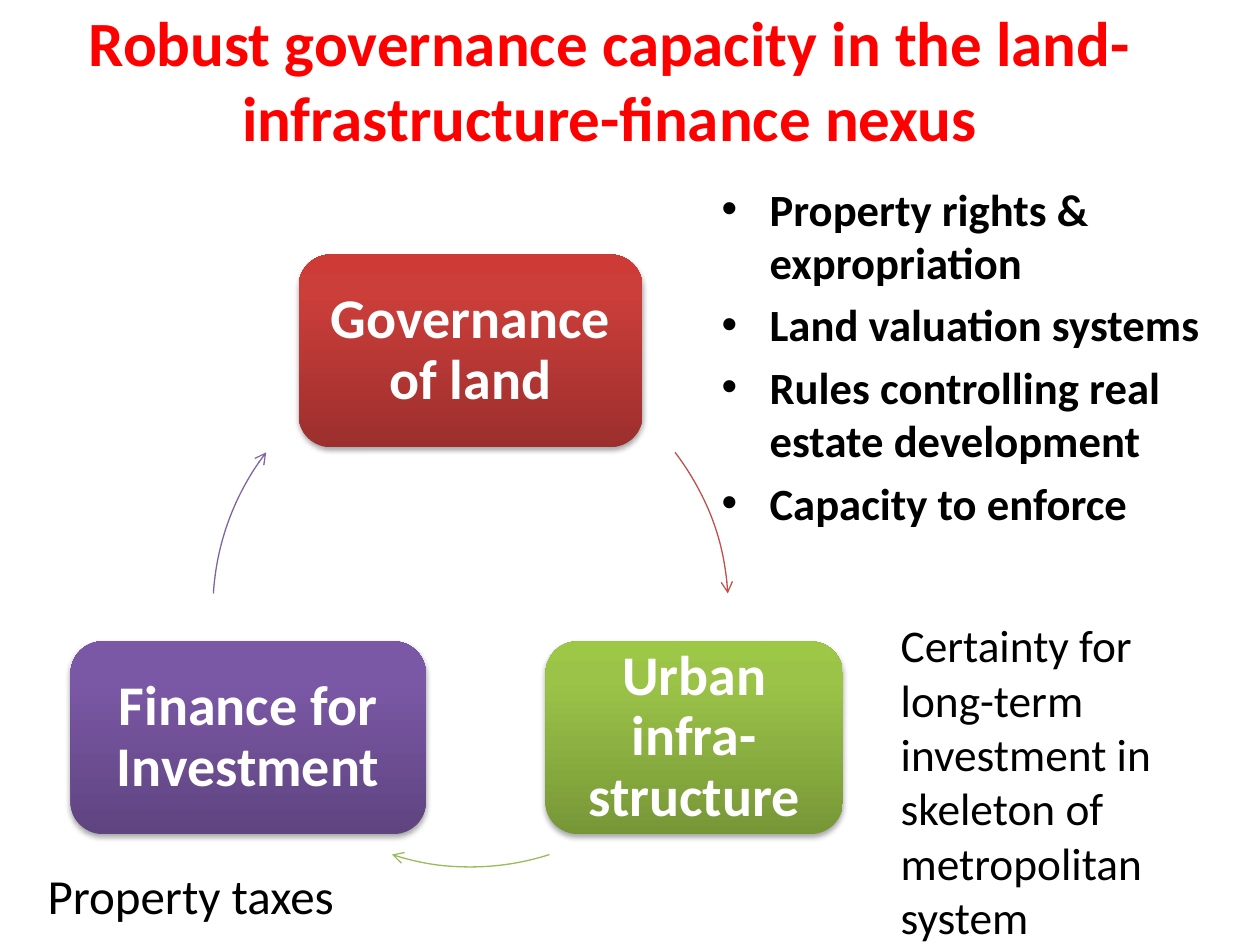
import copy

import pptx
import pptx.dml.color
import pptx.enum.shapes
import pptx.enum.text
import pptx.oxml
import pptx.oxml.ns
import pptx.util
from pptx.util import Inches

COLORS = {"title": "FF0000", "text": "000000", "white": "FFFFFF"}
NS = pptx.oxml.ns.nsdecls("a")
ALIGN = pptx.enum.text.PP_ALIGN
ANCHOR = pptx.enum.text.MSO_ANCHOR
SHAPES = pptx.enum.shapes.MSO_SHAPE


def rgb(value):
    return pptx.dml.color.RGBColor.from_string(value)


def write(shape, lines, size, color, bold=False, align=ALIGN.LEFT, anchor=ANCHOR.TOP):
    """Fill a shape with equally styled paragraphs and return them."""
    frame = shape.text_frame
    frame.word_wrap = True
    frame.vertical_anchor = anchor
    frame.text = "\n".join(lines)
    for para in frame.paragraphs:
        para.alignment = align
        para.font.name = "Calibri"
        para.font.size = pptx.util.Pt(size)
        para.font.bold = bold
        para.font.color.rgb = rgb(color)
    return frame.paragraphs


deck = pptx.Presentation()
deck.slide_width, deck.slide_height = Inches(10), Inches(7.5)
page = deck.slides.add_slide(deck.slide_layouts[6])

# Cycle: rounded nodes as left, top, width, text, gradient from bottom to top
nodes = [
    (2.37, 2.02, 2.73, "Governance of land", ("9C2F2D", "CB3E3A", "CE3B37")),
    (4.33, 5.09, 2.36, "Urban infra-structure", ("779737", "9BC348", "9DC746")),
    (0.56, 5.09, 2.82, "Finance for Investment", ("5F4480", "7B58A6", "7C57A8")),
]
for left, top, width, label, shades in nodes:
    node = page.shapes.add_shape(
        SHAPES.ROUNDED_RECTANGLE, Inches(left), Inches(top), Inches(width), Inches(1.53))
    node.line.fill.background()
    node.fill.gradient()
    node.fill.gradient_angle = 90
    stop_list = node.fill.gradient_stops[0]._gs.getparent()
    stop_list.append(copy.deepcopy(stop_list[-1]))
    for stop, position, shade in zip(node.fill.gradient_stops, (0, 0.8, 1), shades):
        stop.position = position
        stop.color.rgb = rgb(shade)

    # Soft shadow below the node
    node.shadow.inherit = False
    effects = node._element.spPr.find(pptx.oxml.ns.qn("a:effectLst"))
    effects.append(pptx.oxml.parse_xml(
        f'<a:outerShdw {NS} blurRad="40000" dist="23000" dir="5400000" rotWithShape="0">'
        '<a:srgbClr val="000000"><a:alpha val="35000"/></a:srgbClr></a:outerShdw>'))

    frame = node.text_frame
    frame.margin_left = frame.margin_right = Inches(0.13)
    frame.margin_top = frame.margin_bottom = Inches(0.13)
    para = write(node, [label], 32, COLORS["white"], True, ALIGN.CENTER, ANCHOR.MIDDLE)[0]
    para.line_spacing = 0.9

# Cycle: arrows on one circle, as start and end in degrees clockwise from the right
for start, end, color in [(322.5, 356.5, "C0504D"),
                          (72.2, 107.8, "9BBB59"),
                          (183.5, 217.5, "8064A2")]:
    arc = page.shapes.add_shape(
        SHAPES.ARC, Inches(1.69), Inches(2.79), Inches(4.09), Inches(4.09))
    arc.adjustments[0] = start * 0.6  # 60000 units per degree, scaled by 100000
    arc.adjustments[1] = end * 0.6
    arc.fill.background()
    arc.shadow.inherit = False
    arc.line.color.rgb = rgb(color)
    arc.line.width = pptx.util.Pt(0.75)
    arc.line._get_or_add_ln().append(pptx.oxml.parse_xml(f'<a:tailEnd {NS} type="arrow"/>'))

# Title
title = page.shapes.add_textbox(Inches(0.51), Inches(0), Inches(8.66), Inches(1.25))
write(title, ["Robust governance capacity in the land-infrastructure-finance nexus"],
      36, COLORS["title"], True, ALIGN.CENTER, ANCHOR.MIDDLE)

# Bullets on land governance
box = page.shapes.add_textbox(Inches(5.63), Inches(1.39), Inches(4.37), Inches(2.59))
bullets = ["Property rights & expropriation", "Land valuation systems",
           "Rules controlling real estate development", "Capacity to enforce"]
for para in write(box, bullets, 25.5, COLORS["text"], True):
    para.space_before = pptx.util.Pt(5)
    props = para._p.get_or_add_pPr()
    props.set("marL", str(Inches(0.38)))
    props.set("indent", str(-Inches(0.38)))
    font_props = props.find(pptx.oxml.ns.qn("a:defRPr"))
    for mark in (f'<a:buFont {NS} typeface="Arial"/>', f'<a:buChar {NS} char="•"/>'):
        font_props.addprevious(pptx.oxml.parse_xml(mark))

# Notes beside infrastructure and finance
for left, top, width, height, size, note in [
    (7.05, 4.85, 2.47, 2.44, 25.9,
     "Certainty for long-term investment in skeleton of metropolitan system"),
    (0.28, 6.82, 2.76, 0.68, 28, "Property taxes"),
]:
    box = page.shapes.add_textbox(Inches(left), Inches(top), Inches(width), Inches(height))
    para = write(box, [note], size, COLORS["text"])[0]
    para.space_before = pptx.util.Pt(5)

deck.save("out.pptx")
